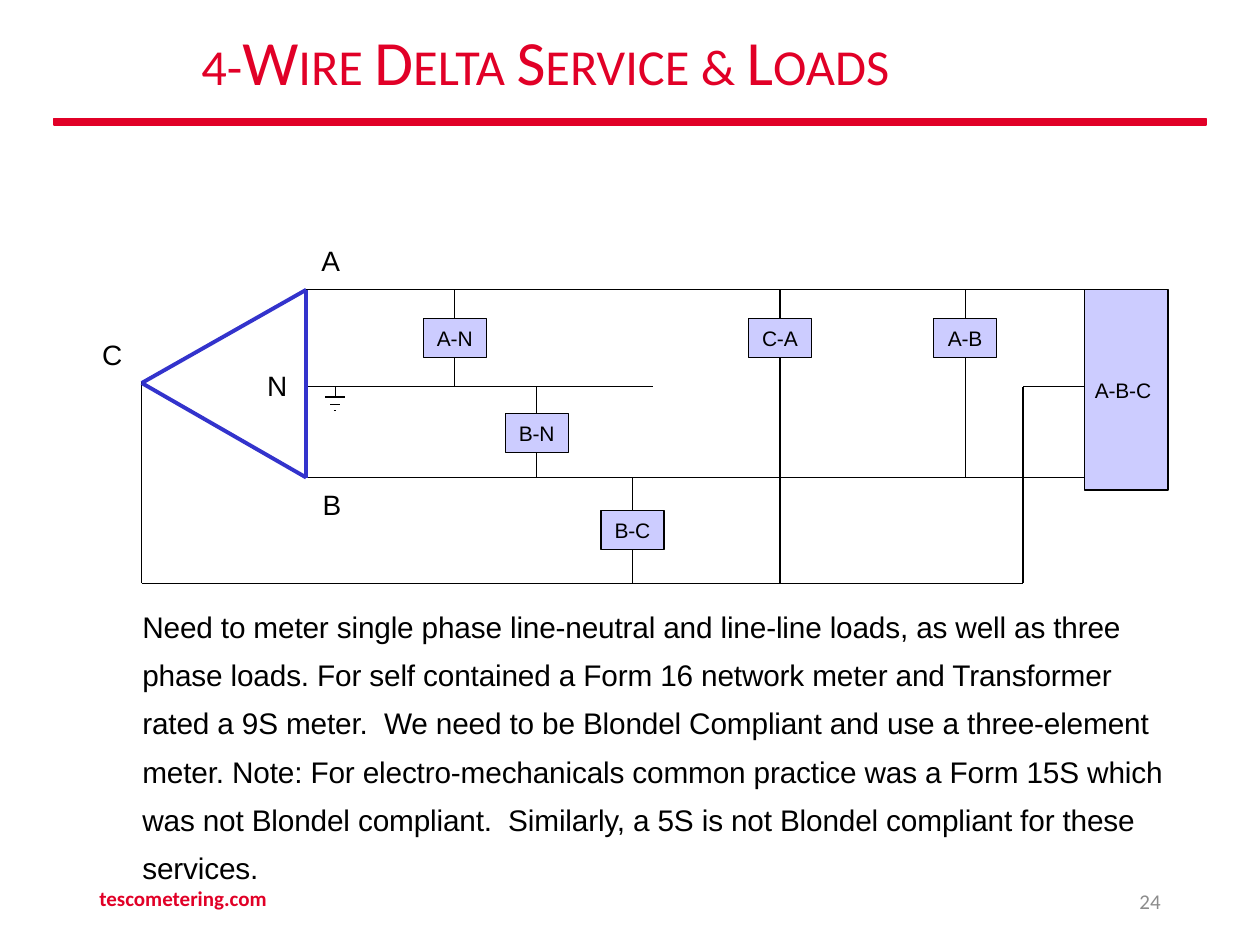
from lxml import etree
from pptx import Presentation
from pptx.dml.color import RGBColor
from pptx.enum.shapes import MSO_CONNECTOR, MSO_SHAPE
from pptx.enum.text import MSO_ANCHOR, PP_ALIGN
from pptx.oxml.ns import qn
from pptx.util import Inches, Pt

STRAIGHT = MSO_CONNECTOR.STRAIGHT
RECTANGLE = MSO_SHAPE.RECTANGLE
TOP, MIDDLE = MSO_ANCHOR.TOP, MSO_ANCHOR.MIDDLE
LEFT, CENTER, RIGHT = PP_ALIGN.LEFT, PP_ALIGN.CENTER, PP_ALIGN.RIGHT
color = RGBColor.from_string
RED, BLACK, GRAY, BLUE, LAVENDER = "E10027", "000000", "8C8C8C", "3333CC", "CCCCFF"

presentation = Presentation()
presentation.slide_width, presentation.slide_height = Inches(10), Inches(7.5)
slide = presentation.slides.add_slide(presentation.slide_layouts[6])
CELL = presentation.slide_width // 100


def write(shape, text, size, font_color=BLACK, font_name="Arial", align=LEFT,
          anchor=MIDDLE, margins=(0, 0)):
    frame = shape.text_frame
    frame.word_wrap = True
    frame.vertical_anchor = anchor
    frame.margin_left = frame.margin_right = int(margins[0] * CELL)
    frame.margin_top = frame.margin_bottom = int(margins[1] * CELL)
    frame.text = text
    paragraph = frame.paragraphs[0]
    paragraph.alignment = align
    run = paragraph.runs[0]
    run.font.size = Pt(size)
    run.font.name = font_name
    run.font.color.rgb = color(font_color)
    if font_name == "Arial":
        run.font._element.set("spc", "-10")
    return paragraph


def place(bounds, fill=None, line=BLACK, width=0.72):
    left, top, across, down = [int(value * CELL) for value in bounds]
    if fill is None:
        return slide.shapes.add_textbox(left, top, across, down)
    shape = slide.shapes.add_shape(RECTANGLE, left, top, across, down)
    shape.shadow.inherit = False
    shape.fill.solid()
    shape.fill.fore_color.rgb = color(fill)
    shape.line.color.rgb = color(line)
    shape.line.width = Pt(width)
    return shape


place((4.3, 9.4, 91.4, 0.5), RED, RED, 1)

line_a, line_n, line_b, line_c = 23, 30.7, 37.9, 46.3
bus_left, bus_right = 24.3, 86
corner_left, return_right = 11.25, 81.2
load_width, load_height = 5, 3.1

loads = [
    ("A-N", 36.1, 25.3, line_a, line_n),
    ("B-N", 42.6, 32.8, line_n, line_b),
    ("B-C", 50.2, 40.5, line_b, line_c),
    ("A-B", 76.6, 25.3, line_a, line_b),
    ("C-A", 61.9, 25.3, line_a, line_c),
]
wires = [
    (bus_left, line_a, bus_right, line_a),
    (bus_left, line_n, 51.8, line_n),
    (bus_left, line_b, bus_right, line_b),
    (corner_left, line_c, return_right, line_c),
    (corner_left, 30.3, corner_left, line_c),
    (return_right, line_c, return_right, line_n),
    (return_right, line_n, bus_right, line_n),
    (26.6, line_n, 26.6, 31.5),
]
for row, half_width in ((31.5, 0.8), (32.1, 0.4), (32.6, 0.1)):
    wires.append((26.6 - half_width, row, 26.6 + half_width, row))

for label, center, top, upper, lower in loads:
    load = place((center - load_width / 2, top, load_width, load_height), LAVENDER)
    write(load, label, 12, align=CENTER)
    wires.append((center, upper, center, top))
    wires.append((center, top + load_height, center, lower))

three_phase = place((86.1, line_a, 6.6, 15.9), LAVENDER)
write(three_phase, "A-B-C", 12, margins=(0.8, 0))

delta = [
    (bus_left, line_a, bus_left, line_b),
    (corner_left, 30.4, bus_left, line_b),
    (bus_left, line_a, corner_left, 30.4),
]
for ends, line_color, width in (
    [(wire, BLACK, 0.72) for wire in wires] + [(side, BLUE, 2.25) for side in delta]
):
    connector = slide.shapes.add_connector(STRAIGHT, *[int(value * CELL) for value in ends])
    connector.line.color.rgb = color(line_color)
    connector.line.width = Pt(width)
    etree.SubElement(connector._element.spPr, qn("a:effectLst"))

for label, left, top in (("A", 25.4, 19.2), ("C", 8, 26.7), ("B", 25.5, 38.6), ("N", 21.1, 29.1)):
    write(place((left, top, 1.9, 2.9)), label, 16, margins=(0.1, 0))

explanation = write(
    place((11.2, 47.3, 81.7, 23.1)),
    "Need to meter single phase line-neutral and line-line loads, as well as three phase loads. "
    "For self contained a Form 16 network meter and Transformer rated a 9S meter.  "
    "We need to be Blondel Compliant and use a three-element meter. "
    "Note: For electro-mechanicals common practice was a Form 15S which was not Blondel compliant.  "
    "Similarly, a 5S is not Blondel compliant for these services.",
    17, anchor=TOP, margins=(0.1, 0))
explanation.line_spacing = Pt(27.6)
explanation._p.get_or_add_pPr().set("marR", "0")
explanation_frame = slide.shapes[-1].text_frame
explanation_frame.margin_right = 0

title = write(place((15, 1.5, 78.8, 7.4)), "4-Wire Delta Service & Loads", 36, RED,
              "Calibri", margins=(1, 0.5))
title.line_spacing = 0.9
title.runs[0].font._element.set("cap", "small")

website = write(place((6.9, 69.3, 33.8, 4)), "tescometering.com", 12, RED,
                "Calibri", margins=(1, 0.5))
website.runs[0].font.bold = True
write(place((70.6, 69.5, 22.5, 4)), "24", 12, GRAY, "Calibri", RIGHT, margins=(1, 0.5))

presentation.save("out.pptx")
